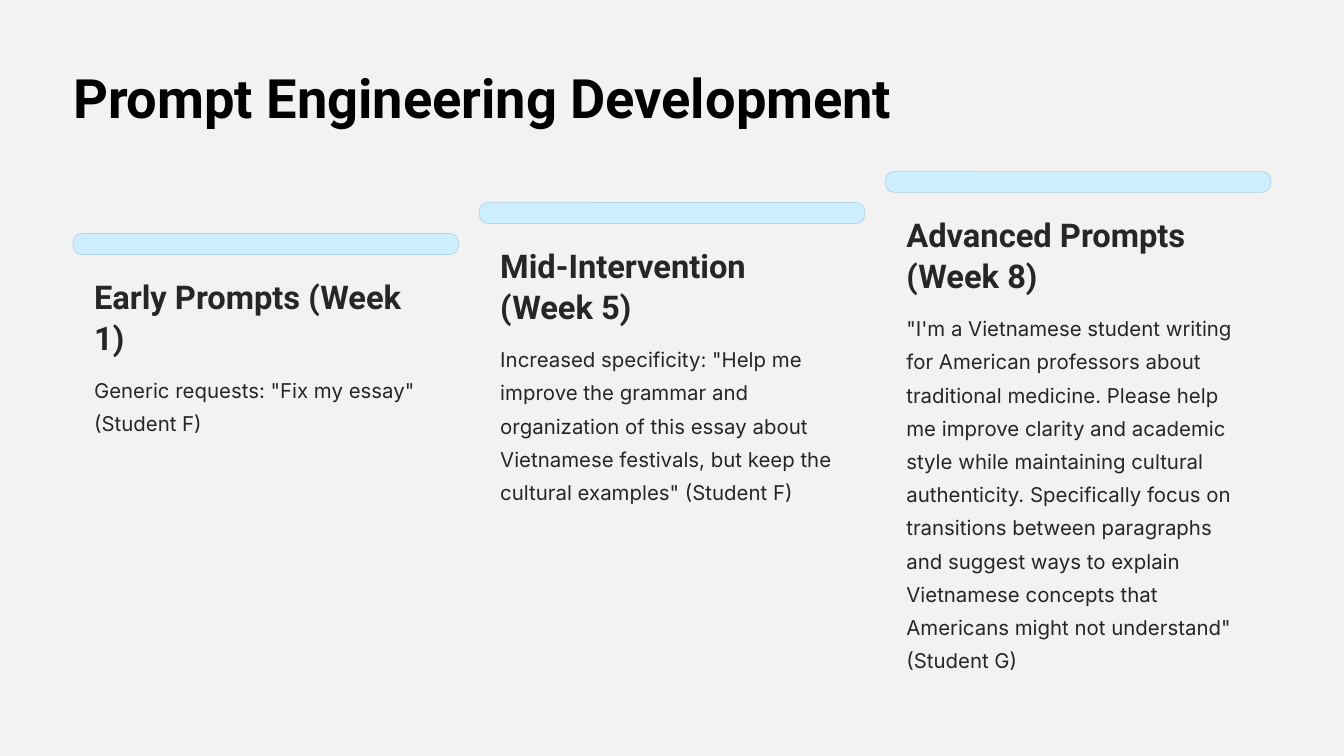
from dataclasses import dataclass

from pptx import Presentation
from pptx.dml.color import RGBColor
from pptx.enum.shapes import MSO_SHAPE as Preset
from pptx.enum.text import MSO_ANCHOR as Anchor, MSO_AUTO_SIZE as AutoSize, PP_ALIGN as Align
from pptx.util import Inches, Pt

PAGE_GREY = RGBColor(0xF2, 0xF2, 0xF2)
BLACK = RGBColor(0x00, 0x00, 0x00)
INK = RGBColor(0x27, 0x25, 0x25)
BAR_BLUE = RGBColor(0xCC, 0xEE, 0xFF)
BAR_EDGE = RGBColor(0xB2, 0xD4, 0xE5)

# Grid in inches: three columns, each one step higher than the last
LEFT = 0.87
COLUMN_PITCH = 4.835
COLUMN_WIDTH = 4.59
FIRST_TOP = 2.78
STEP_RISE = 0.37
BAR_HEIGHT = 0.25
TEXT_INDENT = 0.25
TEXT_WIDTH = COLUMN_WIDTH - 2 * TEXT_INDENT
HEADING_DROP = 0.5
HEADING_HEIGHT = 0.98
BODY_DROP = 1.62
BODY_LINE = 0.396


@dataclass(frozen=True)
class TextStyle:
    font: str
    size: float
    line_spacing: float
    color: RGBColor
    bold: bool = False


@dataclass(frozen=True)
class Stage:
    heading: str
    body: str
    body_lines: int


TITLE = TextStyle("Roboto", 46.5, 58.5, BLACK, True)
HEADING = TextStyle("Roboto", 28, 35, INK, True)
BODY = TextStyle("Inter", 17.5, 28.5, INK)

STAGES = [
    Stage("Early Prompts (Week 1)",
          'Generic requests: "Fix my essay" (Student F)', 2),
    Stage("Mid-Intervention (Week 5)",
          'Increased specificity: "Help me improve the grammar and organization of this '
          'essay about Vietnamese festivals, but keep the cultural examples" (Student F)', 5),
    Stage("Advanced Prompts (Week 8)",
          '"I\'m a Vietnamese student writing for American professors about traditional '
          'medicine. Please help me improve clarity and academic style while maintaining '
          'cultural authenticity. Specifically focus on transitions between paragraphs and '
          'suggest ways to explain Vietnamese concepts that Americans might not understand" '
          '(Student G)', 11),
]


def write(box, text: str, style: TextStyle, wrap: bool = True) -> None:
    frame = box.text_frame
    frame.text = text
    frame.word_wrap = wrap
    frame.auto_size = AutoSize.NONE
    frame.vertical_anchor = Anchor.TOP
    frame.margin_left = frame.margin_right = frame.margin_top = frame.margin_bottom = 0
    para = frame.paragraphs[0]
    para.alignment = Align.LEFT
    para.line_spacing = Pt(style.line_spacing)
    para.space_before = Pt(0)
    font = para.runs[0].font
    font.name, font.size, font.bold = style.font, Pt(style.size), style.bold
    font.color.rgb = style.color


def add_text(page, left: float, top: float, height: float, text: str, style: TextStyle) -> None:
    box = page.shapes.add_textbox(Inches(left), Inches(top), Inches(TEXT_WIDTH), Inches(height))
    write(box, text, style)


def add_bar(page, left: float, top: float) -> None:
    bar = page.shapes.add_shape(Preset.ROUNDED_RECTANGLE, Inches(left), Inches(top),
                                Inches(COLUMN_WIDTH), Inches(BAR_HEIGHT))
    bar.adjustments[0] = 0.42
    bar.shadow.inherit = False
    bar.fill.solid()
    bar.fill.fore_color.rgb = BAR_BLUE
    bar.line.color.rgb = BAR_EDGE
    bar.line.width = Pt(0.6)


def add_stage(page, index: int, stage: Stage) -> None:
    left = LEFT + index * COLUMN_PITCH
    top = FIRST_TOP - index * STEP_RISE
    text_left = left + TEXT_INDENT
    add_bar(page, left, top)
    add_text(page, text_left, top + HEADING_DROP, HEADING_HEIGHT, stage.heading, HEADING)
    add_text(page, text_left, top + BODY_DROP, stage.body_lines * BODY_LINE, stage.body, BODY)


def main() -> None:
    deck = Presentation()
    deck.slide_width, deck.slide_height = Inches(16), Inches(9)
    page = deck.slides.add_slide(deck.slide_layouts[5])
    page.background.fill.solid()
    page.background.fill.fore_color.rgb = PAGE_GREY

    # Title
    title = page.shapes.title
    title.left, title.top = Inches(LEFT), Inches(0.73)
    title.width, title.height = Inches(10.16), Inches(0.81)
    write(title, "Prompt Engineering Development", TITLE, wrap=False)

    # Rising stages
    for index, stage in enumerate(STAGES):
        add_stage(page, index, stage)

    deck.save("out.pptx")


if __name__ == "__main__":
    main()
